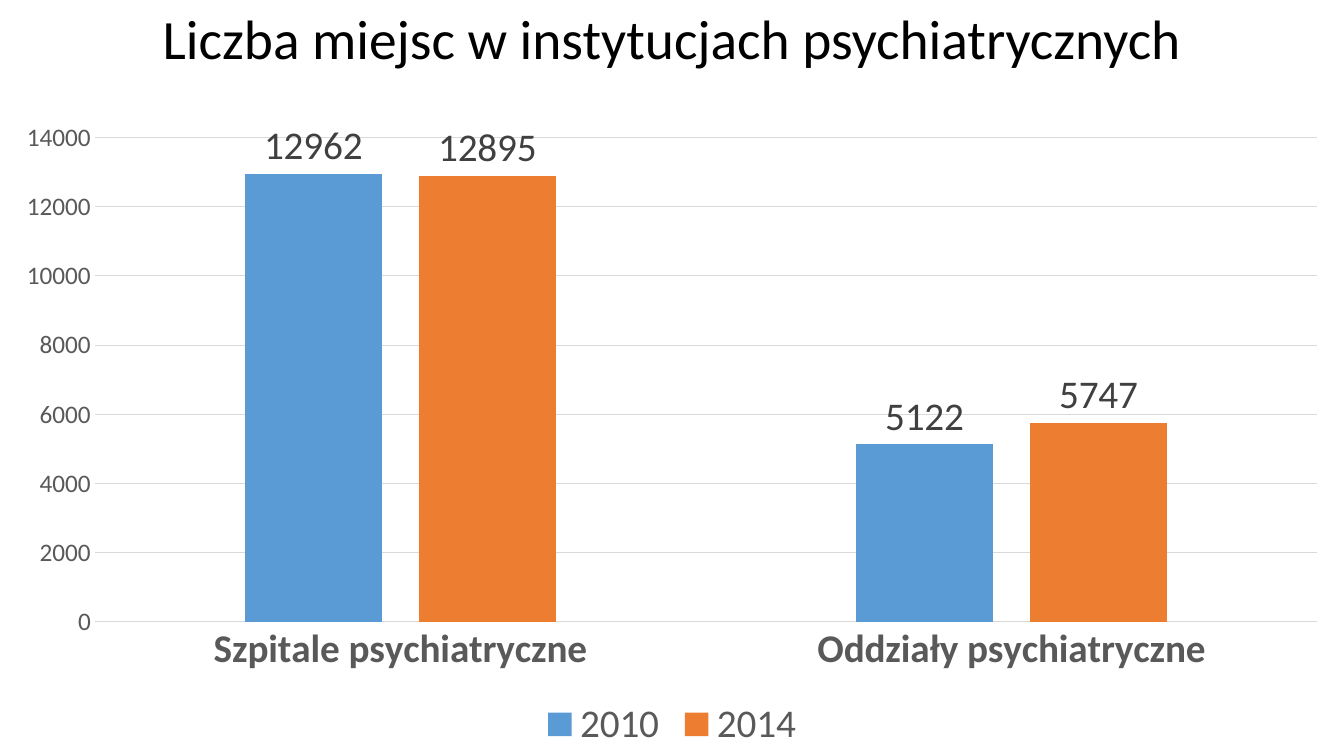
"""Build a slide comparing places in psychiatric institutions by year."""
from pptx import Presentation
from pptx.chart.data import CategoryChartData
from pptx.dml.color import RGBColor
from pptx.enum.chart import XL_CHART_TYPE as ChartType
from pptx.enum.chart import XL_LABEL_POSITION as LabelPos
from pptx.enum.chart import XL_LEGEND_POSITION as LegendPos
from pptx.enum.chart import XL_TICK_MARK as TickMark
from pptx.enum.text import MSO_ANCHOR, PP_ALIGN
from pptx.util import Inches, Pt

FONT = "Calibri"
BLACK = RGBColor(0x00, 0x00, 0x00)
DARK = RGBColor(0x40, 0x40, 0x40)
GREY = RGBColor(0x59, 0x59, 0x59)
RULE = RGBColor(0xD9, 0xD9, 0xD9)
BLUE = RGBColor(0x5B, 0x9B, 0xD5)
ORANGE = RGBColor(0xED, 0x7D, 0x31)

WIDTH, HEIGHT = Inches(13.33), Inches(7.5)
TITLE_SHARE = 0.11
CHART_TOP_SHARE = 0.145

INSTITUTIONS = ["Szpitale psychiatryczne", "Oddziały psychiatryczne"]
PLACES = [("2010", [12962, 5122], BLUE), ("2014", [12895, 5747], ORANGE)]


def set_font(font, size, color, bold=False):
    """Apply the slide's typeface with a size, colour and weight."""
    font.name = FONT
    font.size = Pt(size)
    font.bold = bold
    font.color.rgb = color


def set_rule(line):
    """Draw a thin light grey line."""
    line.color.rgb = RULE
    line.width = Pt(0.75)


def add_title(s, text):
    """Add the centred heading across the top of the slide."""
    tf = s.shapes.add_textbox(0, 0, WIDTH, int(HEIGHT * TITLE_SHARE)).text_frame
    tf.word_wrap = True
    tf.vertical_anchor = MSO_ANCHOR.MIDDLE
    p = tf.paragraphs[0]
    p.alignment = PP_ALIGN.CENTER
    p.line_spacing = 0.9
    r = p.add_run()
    r.text = text
    set_font(r.font, 39.6, BLACK)


def style_axes(chart):
    """Format the category axis, the value axis and the gridlines."""
    for axis, size, bold in ((chart.category_axis, 28, True),
                             (chart.value_axis, 18, False)):
        axis.major_tick_mark = axis.minor_tick_mark = TickMark.NONE
        set_font(axis.tick_labels.font, size, GREY, bold)
    set_rule(chart.category_axis.format.line)
    values = chart.value_axis
    values.minimum_scale, values.maximum_scale = 0, 14000
    values.major_unit = 2000
    values.format.line.fill.background()
    values.has_major_gridlines = True
    set_rule(values.major_gridlines.format.line)


def style_series(series, color):
    """Colour one year's columns and label them above."""
    series.format.fill.solid()
    series.format.fill.fore_color.rgb = color
    series.invert_if_negative = False
    labels = series.data_labels
    labels.show_value = True
    labels.position = LabelPos.OUTSIDE_END
    set_font(labels.font, 28, DARK)


def add_places_chart(s):
    """Add the clustered columns with their legend below."""
    data = CategoryChartData()
    data.categories = INSTITUTIONS
    for year, values, _ in PLACES:
        data.add_series(year, values)
    top = int(HEIGHT * CHART_TOP_SHARE)
    chart = s.shapes.add_chart(ChartType.COLUMN_CLUSTERED, 0, top,
                               WIDTH, HEIGHT - top, data).chart
    set_font(chart.font, 10, BLACK)
    chart.has_title = False
    chart.has_legend = True
    chart.legend.position = LegendPos.BOTTOM
    chart.legend.include_in_layout = False
    set_font(chart.legend.font, 28, GREY)
    plot = chart.plots[0]
    plot.gap_width, plot.overlap = 219, -27
    plot.vary_by_categories = False
    style_axes(chart)
    for series, (_, _, color) in zip(plot.series, PLACES):
        style_series(series, color)


def main():
    """Create the presentation and save it."""
    prs = Presentation()
    prs.slide_width, prs.slide_height = WIDTH, HEIGHT
    s = prs.slides.add_slide(prs.slide_layouts[6])
    add_title(s, "Liczba miejsc w instytucjach psychiatrycznych")
    add_places_chart(s)
    prs.save("out.pptx")


if __name__ == "__main__":
    main()
